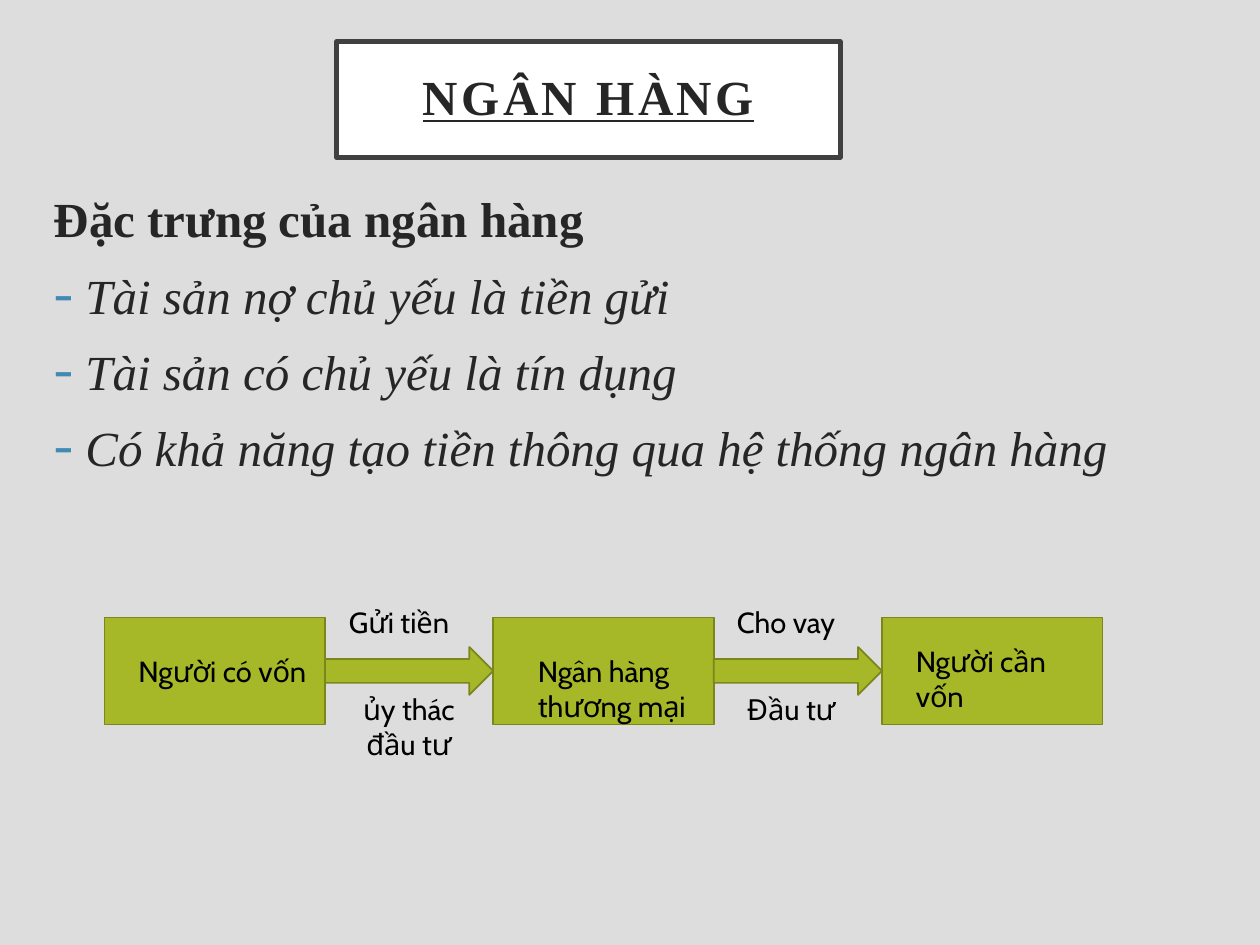
"""Build the slide on the characteristics of banks and the flow of capital."""
from dataclasses import dataclass

from lxml.etree import SubElement
from pptx import Presentation
from pptx.dml.color import RGBColor as RGB
from pptx.enum.shapes import MSO_SHAPE as Shape
from pptx.enum.text import MSO_ANCHOR as Anchor, MSO_AUTO_SIZE as AutoSize, PP_ALIGN as Align
from pptx.oxml.ns import qn
from pptx.util import Inches, Pt


@dataclass(frozen=True)
class Theme:
    background: RGB = RGB(0xDD, 0xDD, 0xDD)
    white: RGB = RGB(0xFF, 0xFF, 0xFF)
    frame: RGB = RGB(0x40, 0x40, 0x40)
    text: RGB = RGB(0x26, 0x26, 0x26)
    black: RGB = RGB(0, 0, 0)
    bullet: RGB = RGB(0x41, 0x8A, 0xB3)
    green: RGB = RGB(0xA6, 0xB7, 0x27)
    green_line: RGB = RGB(0x7B, 0x87, 0x1D)
    serif: str = "Times New Roman"
    sans: str = "Cabin"
    heading_size: float = 28
    label_size: float = 16.6


@dataclass(frozen=True)
class Label:
    text: str
    left: float
    top: float
    width: float
    height: float
    align: Align = Align.LEFT
    wrap: bool = True


THEME = Theme()
HEADING = "Đặc trưng của ngân hàng"
FEATURES = (
    "Tài sản nợ chủ yếu là tiền gửi",
    "Tài sản có chủ yếu là tín dụng",
    "Có khả năng tạo tiền thông qua hệ thống ngân hàng",
)
LABELS = (
    Label("Người có vốn", 1, 5.14, 1.58, 0.66),
    Label("Ngân hàng thương mại", 4.17, 5.14, 1.42, 1.22),
    Label("Người cần vốn", 7.17, 5.06, 1.5, 0.66),
    Label("Gửi tiền", 2.67, 4.75, 1.08, 0.38),
    Label("Cho vay", 5.75, 4.75, 1.16, 0.38, wrap=False),
    Label("Đầu tư", 5.83, 5.44, 1.16, 0.38),
    Label("ủy thác đầu tư", 2.58, 5.44, 1.33, 0.66, align=Align.CENTER),
)
FLOW_LEFT, FLOW_STEP, FLOW_COUNT = 0.83, 3.085, 3
BOX_TOP, BOX_WIDTH, BOX_HEIGHT = 4.9, 1.75, 0.85
ARROW_HEIGHT = 0.38


def format_run(r, font: str, size: float, color: RGB, bold: bool = False, italic: bool = False) -> None:
    r.font.name = font
    r.font.size = Pt(size)
    r.font.color.rgb = color
    r.font.bold = bold
    r.font.italic = italic


def paint(sp, fill: RGB, line: RGB, width: float) -> None:
    sp.fill.solid()
    sp.fill.fore_color.rgb = fill
    sp.line.color.rgb = line
    sp.line.width = Pt(width)


def add_title(s) -> None:
    sp = s.shapes.title
    sp.left, sp.top, sp.width, sp.height = map(Inches, (2.67, 0.33, 4, 0.92))
    paint(sp, THEME.white, THEME.frame, 2.5)
    tf = sp.text_frame
    tf.text = "NGÂN HÀNG"
    tf.vertical_anchor = Anchor.MIDDLE
    tf.margin_left = tf.margin_right = tf.margin_top = tf.margin_bottom = Inches(0.2)
    p = tf.paragraphs[0]
    p.alignment = Align.CENTER
    p.line_spacing = 0.9
    r = p.runs[0]
    format_run(r, THEME.serif, THEME.heading_size, THEME.text, bold=True)
    r.font.underline = True
    r.font._element.set("spc", "200")


def add_bullet(p) -> None:
    pPr = p._p.get_or_add_pPr()
    color = SubElement(pPr, qn("a:buClr"))
    SubElement(color, qn("a:srgbClr")).set("val", str(THEME.bullet))
    SubElement(pPr, qn("a:buFont")).set("typeface", THEME.sans)
    SubElement(pPr, qn("a:buChar")).set("char", "-")


def add_features(s) -> None:
    tf = s.shapes.add_textbox(*map(Inches, (0.33, 1.42, 9.33, 4.86))).text_frame
    tf.word_wrap = True
    tf.margin_top = Inches(0.08)
    tf.text = "\n".join((HEADING, *FEATURES))
    for i, p in enumerate(tf.paragraphs):
        p.space_before = Pt(10)
        pPr = p._p.get_or_add_pPr()
        pPr.set("marL", str(Inches(0.25)))
        pPr.set("indent", str(-Inches(0.25)))
        if i:
            add_bullet(p)
        format_run(p.runs[0], THEME.serif, THEME.heading_size, THEME.text, bold=i == 0, italic=i > 0)


def add_flow_shape(s, kind: Shape, left: float, top: float, width: float, height: float) -> None:
    sp = s.shapes.add_shape(kind, *map(Inches, (left, top, width, height)))
    sp.shadow.inherit = False
    paint(sp, THEME.green, THEME.green_line, 1)


def add_flow(s) -> None:
    for i in range(FLOW_COUNT):
        left = FLOW_LEFT + i * FLOW_STEP
        add_flow_shape(s, Shape.RECTANGLE, left, BOX_TOP, BOX_WIDTH, BOX_HEIGHT)
        if i < FLOW_COUNT - 1:
            top = BOX_TOP + (BOX_HEIGHT - ARROW_HEIGHT) / 2
            add_flow_shape(s, Shape.RIGHT_ARROW, left + BOX_WIDTH, top, FLOW_STEP - BOX_WIDTH, ARROW_HEIGHT)


def add_label(s, label: Label) -> None:
    sp = s.shapes.add_textbox(*map(Inches, (label.left, label.top, label.width, label.height)))
    tf = sp.text_frame
    tf.word_wrap = label.wrap
    tf.auto_size = AutoSize.SHAPE_TO_FIT_TEXT
    tf.text = label.text
    p = tf.paragraphs[0]
    p.alignment = label.align
    format_run(p.runs[0], THEME.sans, THEME.label_size, THEME.black)


def main() -> None:
    prs = Presentation()
    prs.slide_width, prs.slide_height = Inches(10), Inches(7.5)
    s = prs.slides.add_slide(prs.slide_layouts[5])
    s.background.fill.solid()
    s.background.fill.fore_color.rgb = THEME.background
    add_title(s)
    add_features(s)
    add_flow(s)
    for label in LABELS:
        add_label(s, label)
    prs.save("out.pptx")


if __name__ == "__main__":
    main()
